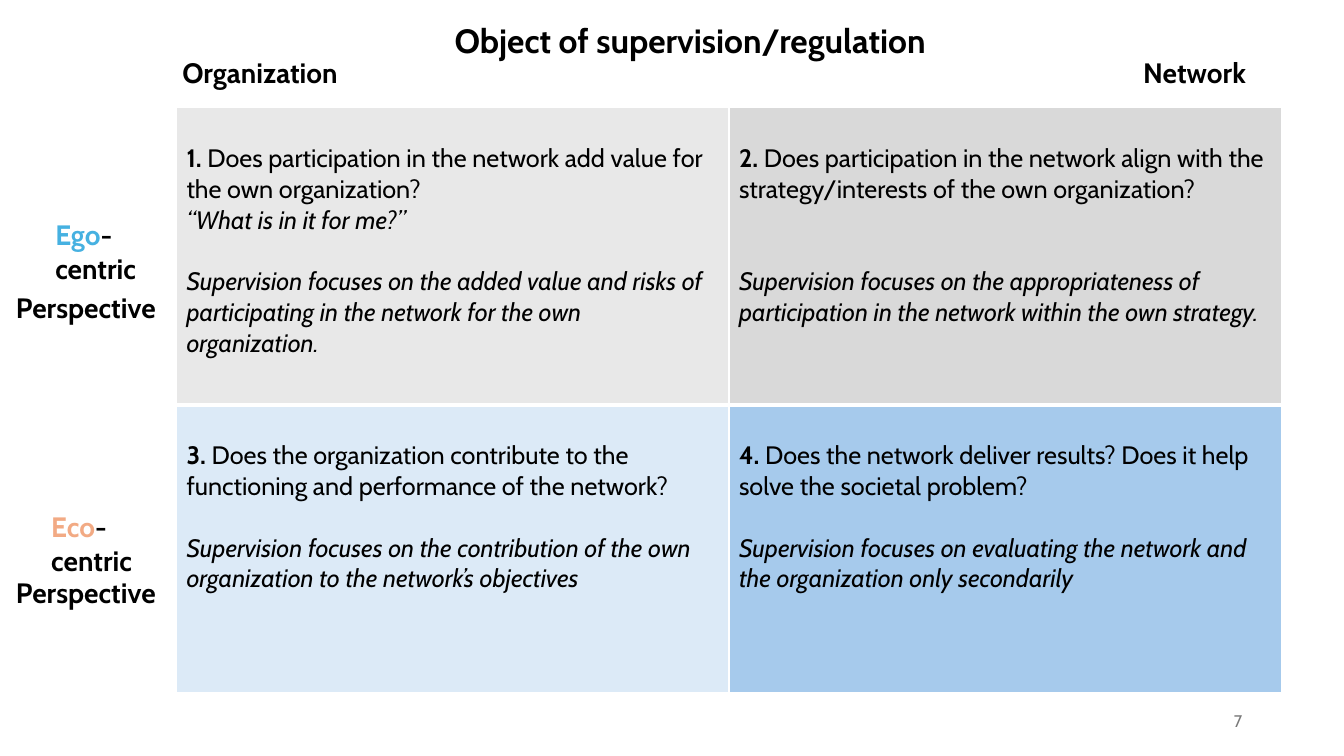
import pptx
import pptx.dml.color
import pptx.enum.text
import pptx.oxml
import pptx.oxml.ns
import pptx.util

Inches, Pt = pptx.util.Inches, pptx.util.Pt
ALIGN = pptx.enum.text.PP_ALIGN
ANCHOR = pptx.enum.text.MSO_ANCHOR

FONT = "Cabin"
COLORS = {
    "text": "000000",
    "number": "797979",
    "border": "FFFFFF",
    "ego": "46B1E1",
    "eco": "F2AA84",
    "ego_org": "E8E8E8",
    "ego_net": "D9D9D9",
    "eco_org": "DCEAF7",
    "eco_net": "A6CAEC",
}
LINE = 22  # height of one 18 pt text line, in points

# Each cell: fill, question, optional quote, gap in lines, supervision focus
QUADRANTS = [
    [
        ("ego_org",
         "Does participation in the network add value for the own organization?",
         "“What is in it for me?”", 1,
         "Supervision focuses on the added value and risks of participating "
         "in the network for the own organization."),
        ("ego_net",
         "Does participation in the network align with the strategy/interests "
         "of the own organization?",
         None, 2,
         "Supervision focuses on the appropriateness of participation in the "
         "network within the own strategy."),
    ],
    [
        ("eco_org",
         "Does the organization contribute to the functioning and performance "
         "of the network?",
         None, 1,
         "Supervision focuses on the contribution of the own organization to "
         "the network’s objectives"),
        ("eco_net",
         "Does the network deliver results? Does it help solve the societal problem?",
         None, 1,
         "Supervision focuses on evaluating the network and the organization "
         "only secondarily"),
    ],
]


def rgb(name):
    return pptx.dml.color.RGBColor.from_string(COLORS[name])


def add_run(p, text, size, color="text", **style):
    r = p.add_run()
    r.text = text
    r.font.color.rgb = rgb(color)
    for key, value in {"name": FONT, "size": Pt(size), **style}.items():
        setattr(r.font, key, value)


def add_label(s, box, runs, size=20, bold=True, align=ALIGN.LEFT, anchor=ANCHOR.TOP):
    """Add a text box holding one paragraph of (text, colour) runs."""
    tf = s.shapes.add_textbox(*map(Inches, box)).text_frame
    tf.word_wrap = True
    tf.vertical_anchor = anchor
    p = tf.paragraphs[0]
    p.alignment = align
    for text, color in runs:
        add_run(p, text, size, color, bold=bold)


def set_title(s, box, text):
    sp = s.shapes.title
    sp.left, sp.top, sp.width, sp.height = map(Inches, box)
    tf = sp.text_frame
    tf.word_wrap = True
    tf.auto_size = pptx.enum.text.MSO_AUTO_SIZE.NONE
    tf.vertical_anchor = ANCHOR.TOP
    tf.paragraphs[0].alignment = ALIGN.LEFT
    add_run(tf.paragraphs[0], text, 24, bold=True)


def add_perspective(s, box, prefix, color, indent, drop):
    """Add a row heading; indent and drop place its two lines in the box."""
    left, top, width, height = box
    add_label(s, (left + indent, top, 1.3, height),
              [(prefix, color), ("-centric", "text")])
    add_label(s, (left, top + drop, width, 0.77), [("Perspective", "text")])


def set_borders(cell, widths):
    tcPr = cell._tc.get_or_add_tcPr()
    for side, width in zip("LRTB", widths):
        tcPr.append(pptx.oxml.parse_xml(
            f'<a:ln{side} {pptx.oxml.ns.nsdecls("a")} w="{Pt(width)}">'
            f'<a:solidFill><a:srgbClr val="{COLORS["border"]}"/></a:solidFill>'
            f'</a:ln{side}>'))


def fill_quadrant(cell, number, fill, question, quote, gap, focus):
    cell.fill.solid()
    cell.fill.fore_color.rgb = rgb(fill)
    cell.margin_top = Inches(0.35)
    tf = cell.text_frame
    p = tf.paragraphs[0]
    add_run(p, f"{number}.", 18, bold=True)
    add_run(p, f" {question}", 18, bold=False)
    if quote:
        add_run(tf.add_paragraph(), quote, 18, bold=False, italic=True)
    p = tf.add_paragraph()
    p.space_before = Pt(gap * LINE)
    add_run(p, focus, 18, bold=False, italic=True)


def add_matrix(s, box, row_heights):
    table = s.shapes.add_table(2, 2, *map(Inches, box)).table
    table.first_row = table.horz_banding = False
    for column in table.columns:
        column.width = Inches(box[2] / 2)
    for i, row in enumerate(QUADRANTS):
        table.rows[i].height = Inches(row_heights[i])
        for j, quadrant in enumerate(row):
            cell = table.cell(i, j)
            set_borders(cell, (1, 1, 1, 3) if i == 0 else (1, 1, 3, 1))
            fill_quadrant(cell, 2 * i + j + 1, *quadrant)


def main():
    prs = pptx.Presentation()
    prs.slide_width, prs.slide_height = Inches(13.33), Inches(7.5)
    s = prs.slides.add_slide(prs.slide_layouts[5])

    set_title(s, (4.41, 0.15, 5.65, 0.5), "Object of supervision/regulation")
    add_matrix(s, (1.75, 1.07, 10.96, 5.8), (2.95, 2.85))
    for left, heading in ((1.71, "Organization"), (11.24, "Network")):
        add_label(s, (left, 0.5, 2.71, 0.44), [(heading, "text")])
    add_perspective(s, (0.06, 2.11, 2.07, 1.11), "Ego", "ego", 0.39, 0.72)
    add_perspective(s, (0.06, 5.01, 2.07, 1.11), "Eco", "eco", 0.35, 0.65)
    add_label(s, (9.42, 6.95, 3, 0.4), [("7", "number")], size=12, bold=False,
              align=ALIGN.RIGHT, anchor=ANCHOR.MIDDLE)

    prs.save("out.pptx")


if __name__ == "__main__":
    main()
